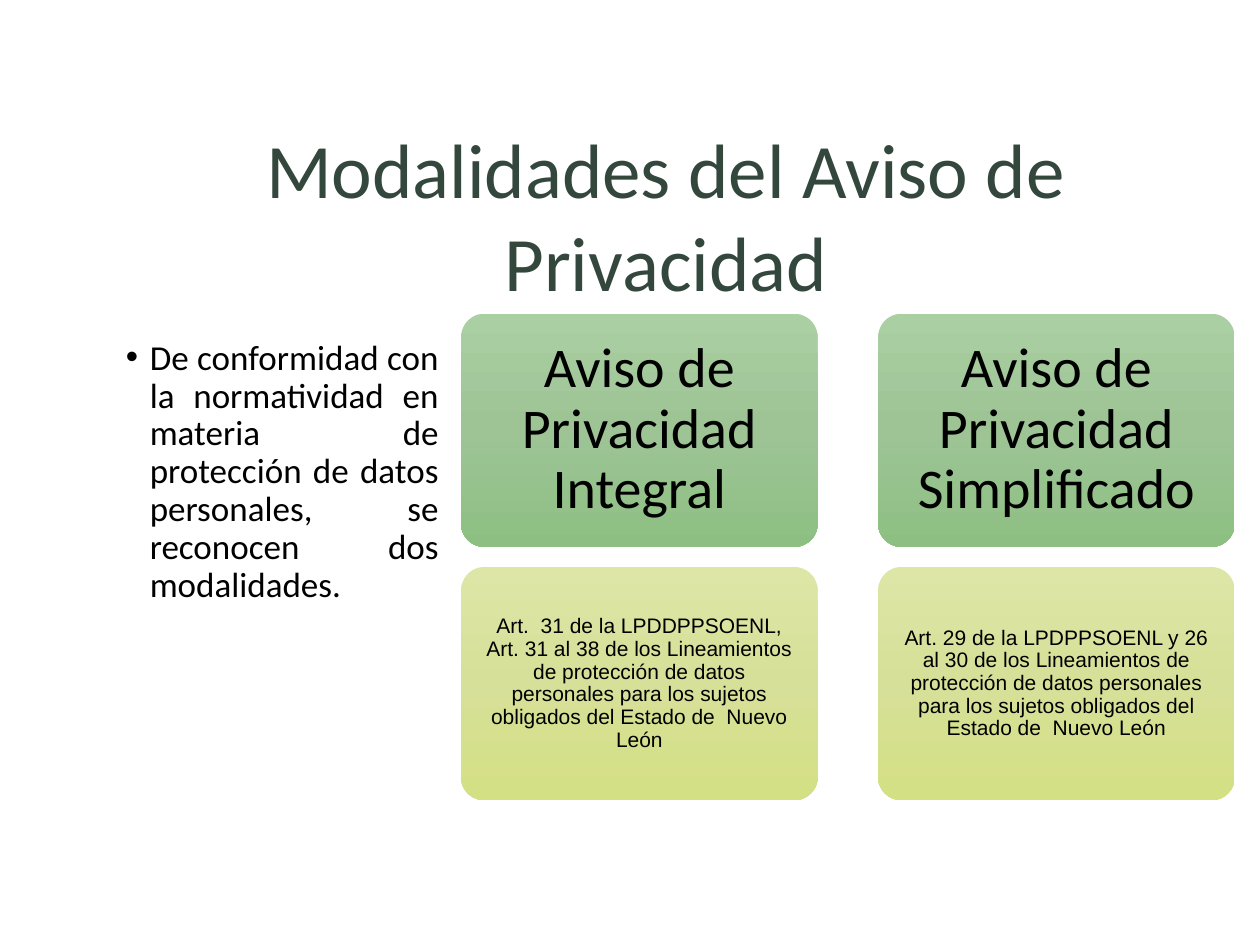
from copy import deepcopy
from lxml import etree
from pptx import Presentation, util as u
from pptx.dml.color import RGBColor
from pptx.enum import shapes, text
from pptx.oxml.ns import qn

BLACK = RGBColor(0x00, 0x00, 0x00)
TITLE_GREEN = RGBColor(0x34, 0x47, 0x3D)
GREENS = [RGBColor.from_string(c) for c in ("AACFA2", "9EC496", "8DBF82")]
LIMES = [RGBColor.from_string(c) for c in ("DDE6A6", "D7E098", "D4E084")]

TITLE = "Modalidades del Aviso de Privacidad"
INTRO = ("De conformidad con la normatividad en materia de protección de datos "
         "personales, se reconocen dos modalidades. ")
NOTICES = [
    ("Aviso de Privacidad Integral",
     "Art.  31 de la LPDDPPSOENL, Art. 31 al 38 de los Lineamientos de protección de "
     "datos personales para los sujetos obligados del Estado de  Nuevo León"),
    ("Aviso de Privacidad Simplificado",
     "Art. 29 de la LPDPPSOENL y 26 al 30 de los Lineamientos de protección de "
     "datos personales para los sujetos obligados del Estado de  Nuevo León"),
]
ROWS = [(GREENS, "Calibri", 32, 0.18), (LIMES, "Arial", 12, 0.1)]
LEFT, TOP, CARD_W, CARD_H = 3.66, 2.49, 2.83, 1.85
COL_STEP, ROW_STEP = 3.31, 2.01


def write(sp, words, font, size, color, align, spacing=1.0):
    tf = sp.text_frame
    tf.word_wrap = True
    p = tf.paragraphs[0]
    p.alignment = align
    p.line_spacing = spacing
    r = p.add_run()
    r.text = words
    r.font.name = font
    r.font.size = u.Pt(size)
    r.font.color.rgb = color
    return p


def add_box(s, *place):
    return s.shapes.add_textbox(*map(u.Inches, place))


def add_card(s, left, top, colors, words, font, size, inset):
    sp = s.shapes.add_shape(shapes.MSO_SHAPE.ROUNDED_RECTANGLE,
                            *map(u.Inches, (left, top, CARD_W, CARD_H)))
    sp.adjustments[0] = 0.1
    sp.shadow.inherit = False
    sp.line.fill.background()
    sp.fill.gradient()
    sp.fill.gradient_angle = 270
    stops = sp._element.spPr.find(".//" + qn("a:gsLst"))
    stops.insert(1, deepcopy(stops[0]))
    for i, (stop, color) in enumerate(zip(sp.fill.gradient_stops, colors)):
        stop.position = i / 2
        stop.color.rgb = color
    tf = sp.text_frame
    tf.vertical_anchor = text.MSO_ANCHOR.MIDDLE
    tf.margin_left = tf.margin_right = tf.margin_top = tf.margin_bottom = u.Inches(inset)
    write(sp, words, font, size, BLACK, text.PP_ALIGN.CENTER, 0.9)


def main():
    prs = Presentation()
    prs.slide_width, prs.slide_height = u.Inches(10), u.Inches(7.5)
    s = prs.slides.add_slide(prs.slide_layouts[6])

    intro = add_box(s, 0.9, 2.65, 2.68, 4.01)
    p = write(intro, INTRO, "Calibri", 20, BLACK, text.PP_ALIGN.JUSTIFY, 0.9)
    pPr = p._p.get_or_add_pPr()
    pPr.set("marL", str(u.Inches(0.19)))
    pPr.set("indent", str(u.Inches(-0.19)))
    etree.SubElement(pPr, qn("a:buFont")).set("typeface", "Arial")
    etree.SubElement(pPr, qn("a:buChar")).set("char", "•")

    for col, notice in enumerate(NOTICES):
        for row, (words, (colors, font, size, inset)) in enumerate(zip(notice, ROWS)):
            add_card(s, LEFT + col * COL_STEP, TOP + row * ROW_STEP,
                     colors, words, font, size, inset)

    title = add_box(s, 1.38, 1.15, 7.81, 1.1)
    title.text_frame.vertical_anchor = text.MSO_ANCHOR.MIDDLE
    write(title, TITLE, "Calibri", 44, TITLE_GREEN, text.PP_ALIGN.CENTER)

    prs.save("out.pptx")


if __name__ == "__main__":
    main()
